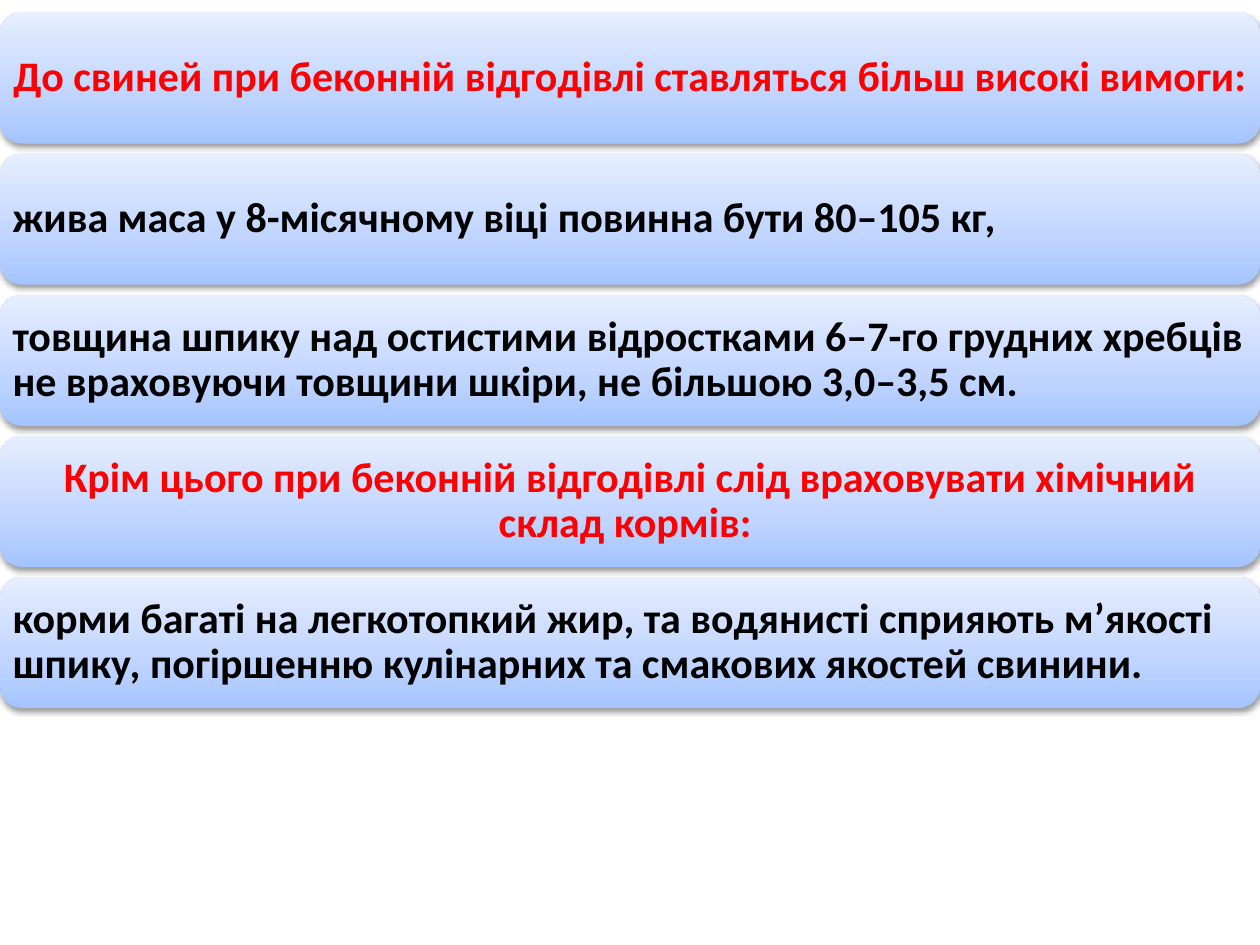
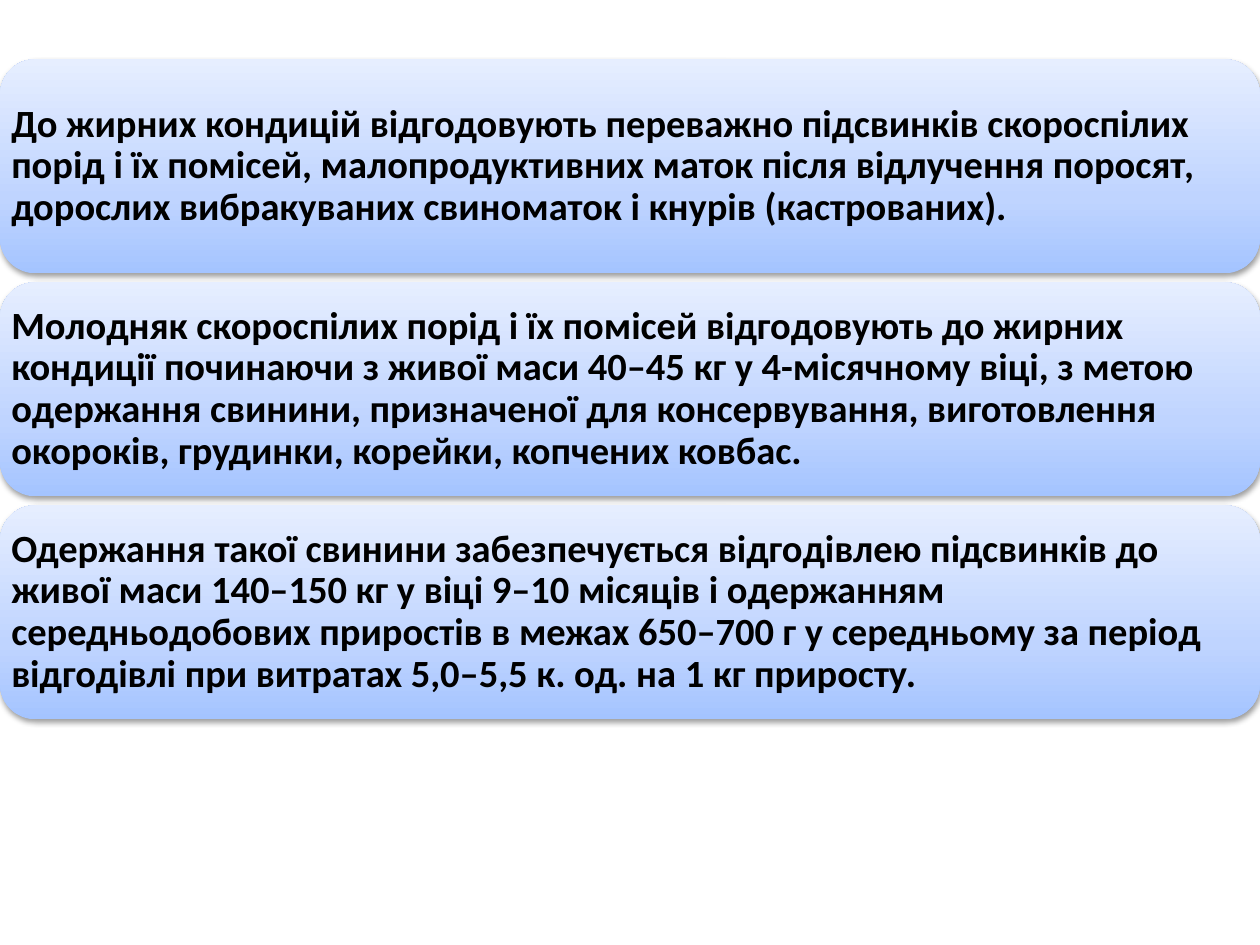
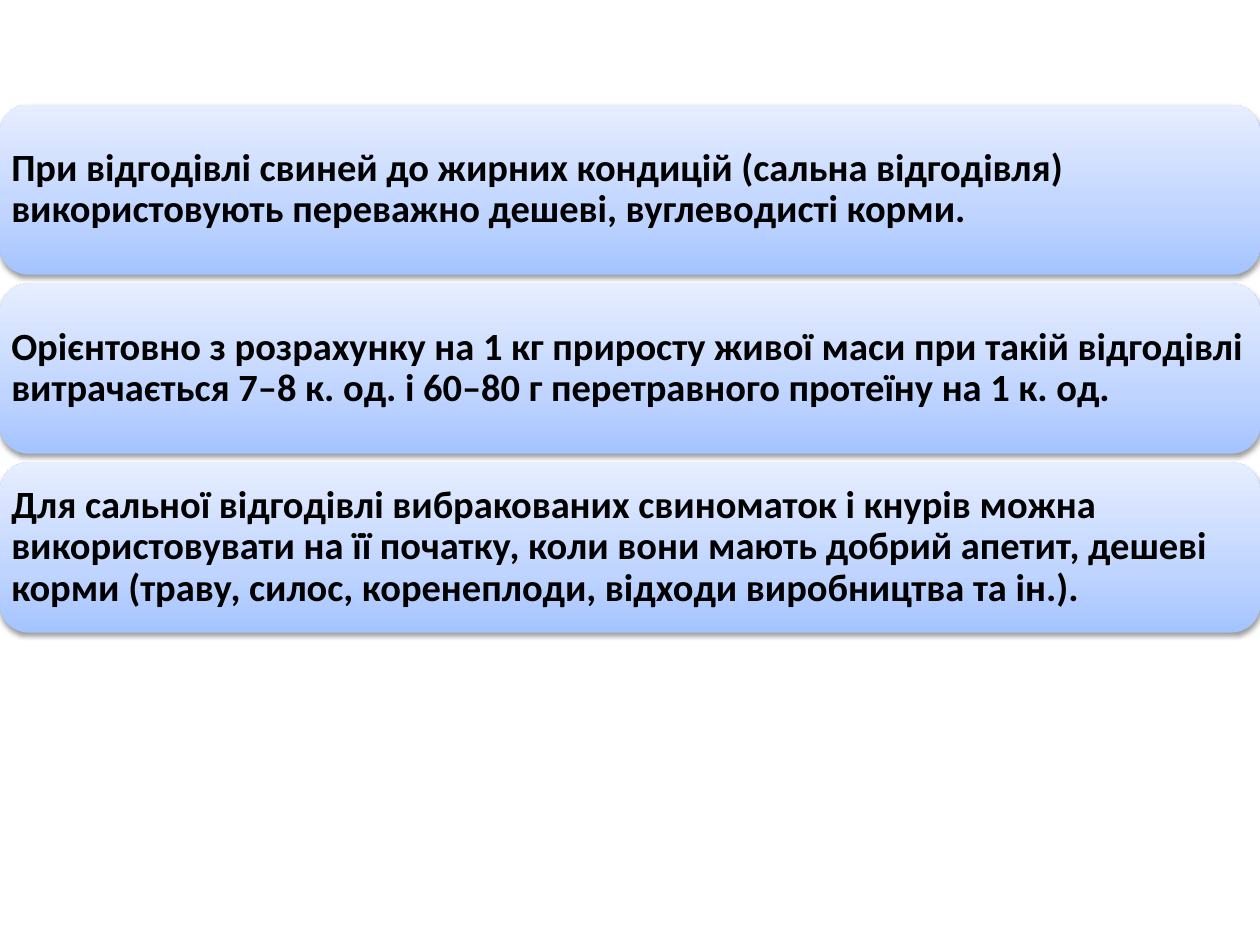
from lxml.etree import SubElement
from pptx import Presentation
from pptx.dml.color import RGBColor
from pptx.enum.shapes import MSO_SHAPE
from pptx.enum.text import MSO_ANCHOR, PP_ALIGN
from pptx.oxml.ns import qn
from pptx.util import Inches, Pt

FONT = "Calibri"
TEXT_COLOUR = "000000"
HEADING_COLOUR = "FF0000"
BAND_GRADIENT = [(0, "A4C4FF"), (35, "BFD4FF"), (100, "E6EEFF")]
CORNER = 0.16667
# Share of the band's height that its round corners take from the text area
CORNER_INSET = CORNER * 0.29289

HEADING, BODY = "heading", "body"

SLIDES = [
    dict(top=0.1, height=1.04, gap=0.08, inset=0.1, size=24, bands=[
        (HEADING, "До свиней при беконній відгодівлі ставляться більш високі вимоги: "),
        (BODY, "жива маса у 8-місячному віці повинна бути 80–105 кг,"),
        (BODY, "товщина шпику над остистими відростками 6–7-го грудних хребців "
               "не враховуючи товщини шкіри, не більшою 3,0–3,5 см."),
        (HEADING, "Крім цього при беконній відгодівлі слід враховувати хімічний "
                  "склад кормів: "),
        (BODY, "корми багаті на легкотопкий жир, та водянисті сприяють м’якості "
               "шпику, погіршенню кулінарних та смакових якостей свинини."),
    ]),
    dict(top=0.47, height=1.7, gap=0.07, inset=0.09, size=22, bands=[
        (BODY, "До жирних кондицій відгодовують переважно підсвинків скороспілих "
               "порід і їх помісей, малопродуктивних маток після відлучення поросят, "
               "дорослих вибракуваних свиноматок і кнурів (кастрованих)."),
        (BODY, "Молодняк скороспілих порід і їх помісей відгодовують до жирних "
               "кондиції починаючи з живої маси 40–45 кг у 4-місячному віці, з метою "
               "одержання свинини, призначеної для консервування, виготовлення "
               "окороків, грудинки, корейки, копчених ковбас."),
        (BODY, "Одержання такої свинини забезпечується відгодівлею підсвинків до "
               "живої маси 140–150 кг у віці 9–10 місяців і одержанням "
               "середньодобових приростів в межах 650–700 г у середньому за період "
               "відгодівлі при витратах 5,0–5,5 к. од. на 1 кг приросту."),
    ]),
    dict(top=0.83, height=1.35, gap=0.07, inset=0.09, size=22, bands=[
        (BODY, "При відгодівлі свиней до жирних кондицій (сальна відгодівля) "
               "використовують переважно дешеві, вуглеводисті корми."),
        (BODY, "Орієнтовно з розрахунку на 1 кг приросту живої маси при такій відгодівлі "
               "витрачається 7–8 к. од. і 60–80 г перетравного протеїну на 1 к. од."),
        (BODY, "Для сальної відгодівлі вибракованих свиноматок і кнурів можна "
               "використовувати на її початку, коли вони мають добрий апетит, дешеві "
               "корми (траву, силос, коренеплоди, відходи виробництва та ін.)."),
    ]),
]


def colour(hex_code):
    return RGBColor.from_string(hex_code)


def style_band(band):
    """Give a band its upward three-stop gradient and soft shadow, without an outline."""
    band.fill.gradient()
    band.fill.gradient_angle = 90
    properties = band._element.spPr
    stops = properties.find(qn("a:gradFill")).find(qn("a:gsLst"))
    for stop in list(stops):
        stops.remove(stop)
    for position, hex_code in BAND_GRADIENT:
        stop = SubElement(stops, qn("a:gs"), pos=str(position * 1000))
        SubElement(stop, qn("a:srgbClr"), val=hex_code)
    band.line.fill.background()

    band.shadow.inherit = False
    effects = properties.find(qn("a:effectLst"))
    shadow = SubElement(effects, qn("a:outerShdw"), blurRad="40000", dist="20000",
                        dir="5400000", rotWithShape="0")
    shade = SubElement(shadow, qn("a:srgbClr"), val="000000")
    SubElement(shade, qn("a:alpha"), val="38000")


deck = Presentation()
deck.slide_width, deck.slide_height = Inches(10), Inches(7.5)
blank_layout = deck.slide_layouts[6]

for content in SLIDES:
    page = deck.slides.add_slide(blank_layout)
    height = content["height"]
    margin = Inches(content["inset"] - CORNER_INSET * height)
    for row, (kind, text) in enumerate(content["bands"]):
        top = content["top"] + row * (height + content["gap"])
        band = page.shapes.add_shape(MSO_SHAPE.ROUNDED_RECTANGLE, 0, Inches(top),
                                     deck.slide_width, Inches(height))
        band.adjustments[0] = CORNER
        style_band(band)

        frame = band.text_frame
        frame.word_wrap = True
        frame.vertical_anchor = MSO_ANCHOR.MIDDLE
        frame.margin_left = frame.margin_right = margin
        frame.margin_top = frame.margin_bottom = margin
        para = frame.paragraphs[0]
        para.alignment = PP_ALIGN.CENTER if kind == HEADING else PP_ALIGN.LEFT
        para.line_spacing = 0.9
        span = para.add_run()
        span.text = text
        span.font.name = FONT
        span.font.size = Pt(content["size"])
        span.font.bold = True
        span.font.color.rgb = colour(HEADING_COLOUR if kind == HEADING else TEXT_COLOUR)

deck.save("out.pptx")
